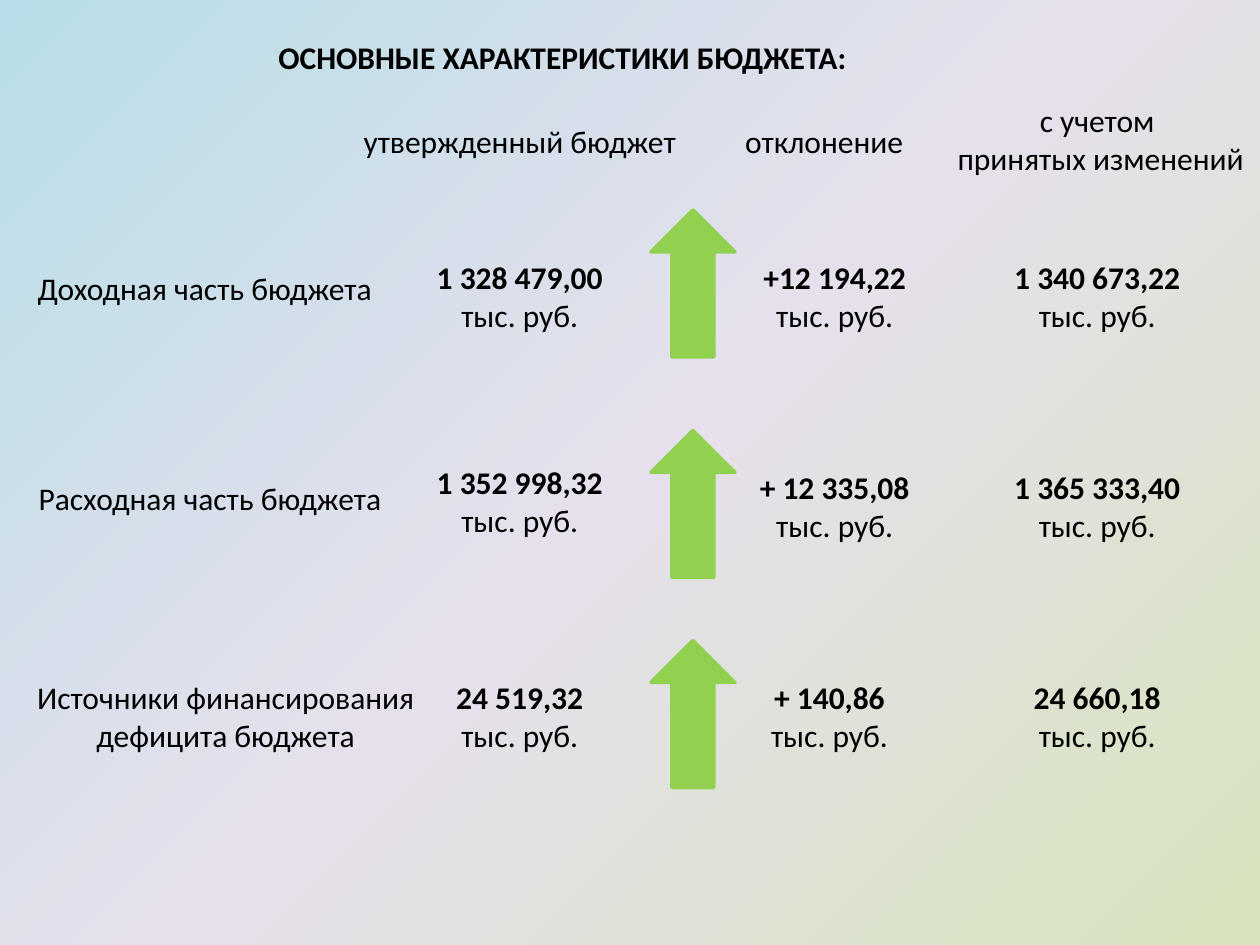
from pptx import Presentation
from pptx.dml.color import RGBColor
from pptx.enum.shapes import MSO_SHAPE as SHAPE
from pptx.enum.text import MSO_AUTO_SIZE as AUTO, PP_ALIGN as ALIGN
from pptx.oxml import parse_xml
from pptx.oxml.ns import nsdecls
from pptx.util import Pt

BLACK = RGBColor(0x00, 0x00, 0x00)
GREEN = RGBColor(0x92, 0xD0, 0x50)
SAGE = RGBColor(0xD7, 0xE4, 0xBD)
LILAC = RGBColor(0xE6, 0xE0, 0xEC)
SKY = RGBColor(0xB7, 0xDE, 0xE8)

UNIT = "тыс. руб."
ONE_LINE, TWO_LINES = 29, 51


class BudgetSlide:
    FONT = {"name": "Calibri", "size": Pt(18)}

    def __init__(self, prs):
        self.s = prs.slides.add_slide(prs.slide_layouts[6])

    def background(self, *colors):
        """Radial gradient spreading from the bottom right corner."""
        fill = self.s.background.fill
        fill.gradient()
        step = 100000 // (len(colors) - 1)
        stops = "".join(
            f'<a:gs pos="{i * step}"><a:srgbClr val="{color}"/></a:gs>'
            for i, color in enumerate(colors))
        grad = parse_xml(
            f'<a:gradFill {nsdecls("a")} rotWithShape="1"><a:gsLst>{stops}</a:gsLst>'
            '<a:path path="circle"><a:fillToRect l="100000" t="100000"/></a:path>'
            '</a:gradFill>')
        old = self.s.background._cSld.xpath("p:bg//a:gradFill")[0]
        old.getparent().replace(old, grad)

    def text(self, left, top, width, *lines, bold=False, wrap=True):
        """Centred lines; bold applies to the first one."""
        height = TWO_LINES if len(lines) > 1 else ONE_LINE
        tf = self.s.shapes.add_textbox(
            Pt(left), Pt(top), Pt(width), Pt(height)).text_frame
        tf.word_wrap = wrap
        tf.auto_size = AUTO.SHAPE_TO_FIT_TEXT
        for i, line in enumerate(lines):
            p = tf.add_paragraph() if i else tf.paragraphs[0]
            p.alignment = ALIGN.CENTER
            r = p.add_run()
            r.text = line
            for key, value in {**self.FONT, "bold": bold and i == 0}.items():
                setattr(r.font, key, value)
            r.font.color.rgb = BLACK

    def amount(self, left, top, width, value):
        self.text(left, top, width, value, UNIT, bold=True)

    def arrow(self, top):
        sp = self.s.shapes.add_shape(
            SHAPE.UP_ARROW, Pt(372), Pt(top), Pt(48), Pt(84))
        sp.shadow.inherit = False
        sp.fill.solid()
        sp.fill.fore_color.rgb = GREEN
        sp.line.color.rgb = GREEN
        sp.line.width = Pt(2)


def main():
    prs = Presentation()
    prs.slide_width, prs.slide_height = Pt(720), Pt(540)
    slide = BudgetSlide(prs)
    slide.background(SAGE, LILAC, SKY)

    slide.text(150, 18, 343, "ОСНОВНЫЕ ХАРАКТЕРИСТИКИ БЮДЖЕТА:",
               bold=True, wrap=False)
    slide.text(198, 66, 198, "утвержденный бюджет")
    slide.text(414, 66, 114, "отклонение")
    slide.text(534, 54, 186, "с учетом", " принятых изменений")

    # label, its top and width; arrow top; approved, change and final amounts
    rows = [
        ("Доходная часть бюджета", 150, 210, 120,
         (240, 144, 114, "1 328 479,00"),
         (426, 144, 102, "+12 194,22"),
         (558, 144, 138, "1 340 673,22")),
        ("Расходная часть бюджета", 270, 216, 246,
         (240, 261, 114, "1 352 998,32"),
         (426, 264, 102, "+ 12 335,08"),
         (570, 264, 114, "1 365 333,40")),
        ("Источники финансирования дефицита бюджета", 384, 234, 366,
         (240, 384, 114, "24 519,32"),
         (426, 384, 96, "+ 140,86"),
         (570, 384, 114, "24 660,18")),
    ]
    for label, top, width, arrow_top, *amounts in rows:
        slide.text(12, top, width, label)
        slide.arrow(arrow_top)
        for amount in amounts:
            slide.amount(*amount)

    prs.save("out.pptx")


if __name__ == "__main__":
    main()
